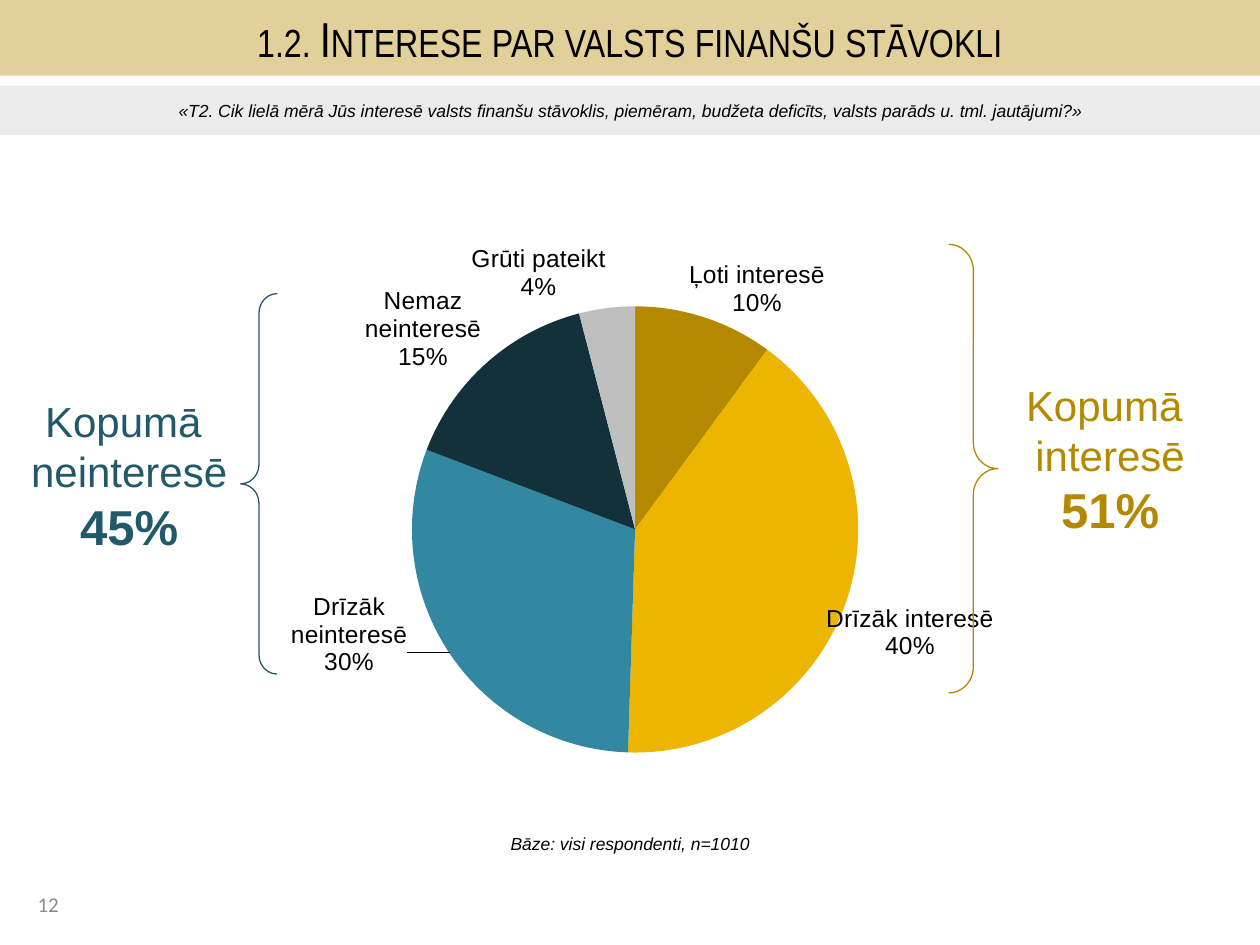
from copy import deepcopy

from lxml import etree
from pptx import Presentation
from pptx.chart.data import CategoryChartData
from pptx.dml.color import RGBColor
from pptx.enum.chart import XL_CHART_TYPE, XL_LABEL_POSITION
from pptx.enum.shapes import MSO_SHAPE
from pptx.enum.text import MSO_ANCHOR, PP_ALIGN
from pptx.oxml import parse_xml
from pptx.oxml.ns import nsdecls, qn
from pptx.util import Inches, Pt

PIE = XL_CHART_TYPE.PIE
OUTER = XL_LABEL_POSITION.OUTSIDE_END
RECT, BRACE = MSO_SHAPE.RECTANGLE, MSO_SHAPE.RIGHT_BRACE
TOP, MIDDLE = MSO_ANCHOR.TOP, MSO_ANCHOR.MIDDLE
LEFT, CENTER = PP_ALIGN.LEFT, PP_ALIGN.CENTER
GOLD, TEAL = "B48900", "215968"


def paint(code):
    return RGBColor.from_string(code)


def inches(box):
    return [Inches(n) for n in box]


def layout(**parts):
    items = "".join(f'<c:{key} val="{val}"/>' for key, val in parts.items())
    return parse_xml(
        f'<c:layout {nsdecls("c")}><c:manualLayout>{items}</c:manualLayout></c:layout>')


def write(frame, text, size=10, color="000000", font="Arial", bold=False,
          italic=False, small=False, align=CENTER, anchor=MIDDLE, more=False):
    frame.word_wrap = True
    frame.vertical_anchor = anchor
    para = frame.add_paragraph() if more else frame.paragraphs[0]
    para.alignment = align
    run = para.add_run()
    run.text = text
    style = run.font
    style.name, style.size, style.color.rgb = font, Pt(size), paint(color)
    style.bold, style.italic = bold, italic
    if small:
        run._r.get_or_add_rPr().set("cap", "small")


class Deck:
    """Holds the style and the current slide."""

    def __init__(self):
        self.show = Presentation()
        self.show.slide_width, self.show.slide_height = Inches(10), Inches(7.5)
        self.slide = self.show.slides.add_slide(self.show.slide_layouts[6])
        self.shapes = self.slide.shapes

    def text(self, box, text, **style):
        frame = self.shapes.add_textbox(*inches(box)).text_frame
        write(frame, text, **style)
        return frame

    def band(self, box, fill, text, alpha=None, **style):
        band = self.shapes.add_shape(RECT, *inches(box))
        band.shadow.inherit = False
        band.fill.solid()
        band.fill.fore_color.rgb = paint(fill)
        if alpha:
            tone = band.fill._xPr.find(".//" + qn("a:srgbClr"))
            etree.SubElement(tone, qn("a:alpha")).set("val", str(alpha * 1000))
        band.line.fill.background()
        write(band.text_frame, text, **style)

    def brace(self, box, color, turn=0):
        brace = self.shapes.add_shape(BRACE, *inches(box))
        brace.shadow.inherit = False
        brace.adjustments[0] = 0.53
        brace.rotation = turn
        brace.fill.background()
        brace.line.color.rgb = paint(color)
        brace.line.width = Pt(0.75)

    def total(self, box, word, share, color):
        frame = self.text(box, "Kopumā ", size=24, color=color, anchor=TOP)
        write(frame, word, size=24, color=color, anchor=TOP, more=True)
        write(frame, share, size=28, color=color, bold=True, anchor=TOP, more=True)

    def pie(self, box, rows, plot):
        data = CategoryChartData()
        data.categories = [row[0] for row in rows]
        data.add_series("Series 1", [row[1] for row in rows])
        chart = self.shapes.add_chart(PIE, *inches(box), data).chart
        chart.has_legend = chart.has_title = False
        chart.font.name, chart.font.size = "Arial", Pt(10)
        chart.font.color.rgb = paint("000000")
        chart.plots[0].vary_by_categories = True
        area = chart._chartSpace.chart.plotArea
        for old in area.findall(qn("c:layout")):
            area.remove(old)
        area.insert(0, layout(layoutTarget="inner", xMode="edge", yMode="edge", **plot))
        series = chart.plots[0].series[0]
        for spot, row in enumerate(rows):
            fill = series.points[spot].format.fill
            fill.solid()
            fill.fore_color.rgb = paint(row[2])
        self.label(series.data_labels, [row[3] for row in rows])

    def label(self, labels, shifts):
        labels.show_value = False
        labels.show_category_name = labels.show_percentage = True
        labels.number_format, labels.number_format_is_linked = "0%", False
        labels.position = OUTER
        labels.font.name, labels.font.size = "Arial", Pt(14)
        labels.font.color.rgb = paint("000000")
        root = labels._element
        mark = etree.Element(qn("c:separator"))
        mark.text = "\n"
        root.find(qn("c:showBubbleSize")).addnext(mark)
        parts = [part for part in root if part.tag != qn("c:showLeaderLines")]
        for spot, shift in enumerate(shifts):
            if shift:
                item = parse_xml(f'<c:dLbl {nsdecls("c")}><c:idx val="{spot}"/></c:dLbl>')
                item.append(layout(x=shift[0], y=shift[1]))
                item.extend([deepcopy(part) for part in parts])
                root.insert(spot, item)


def main():
    deck = Deck()
    deck.text((0.2, 7.03, 1.06, 0.36), "12", size=12, color="8C8C8C",
              font="Calibri", align=LEFT, anchor=TOP)
    deck.text((0, 6.46, 10, 0.47), "Bāze: visi respondenti, n=1010", italic=True)
    deck.band((0, 0, 10, 0.6), "E1D099", "1.2. Interese par valsts finanšu stāvokli",
              size=28, font="Arial Narrow", small=True)
    deck.band((0, 0.68, 10, 0.39), "D9D9D9",
              "«T2. Cik lielā mērā Jūs interesē valsts finanšu stāvoklis, piemēram, "
              "budžeta deficīts, valsts parāds u. tml. jautājumi?»",
              alpha=50, italic=True)
    rows = [
        ("Ļoti interesē", 10, GOLD, (-0.02, 0.01)),
        ("Drīzāk interesē", 40, "EEB500", (-0.03, 0)),
        ("Drīzāk neinteresē", 30, "3288A0", (-0.04, -0.1)),
        ("Nemaz neinteresē", 15, "12313A", (0, 0.02)),
        ("Grūti pateikt", 4, "BFBFBF", None),
    ]
    deck.pie((1.85, 1.47, 7.09, 5.06), rows, dict(x=0.2, y=0.19, w=0.5, h=0.7))
    deck.brace((7.53, 1.94, 0.39, 3.56), GOLD)
    deck.total((7.65, 2.96, 2.32, 1.38), "interesē", "51%", GOLD)
    deck.brace((1.91, 2.33, 0.29, 3.02), TEAL, turn=180)
    deck.total((0.13, 3.09, 1.79, 1.38), "neinteresē", "45%", TEAL)
    deck.show.save("out.pptx")


if __name__ == "__main__":
    main()
